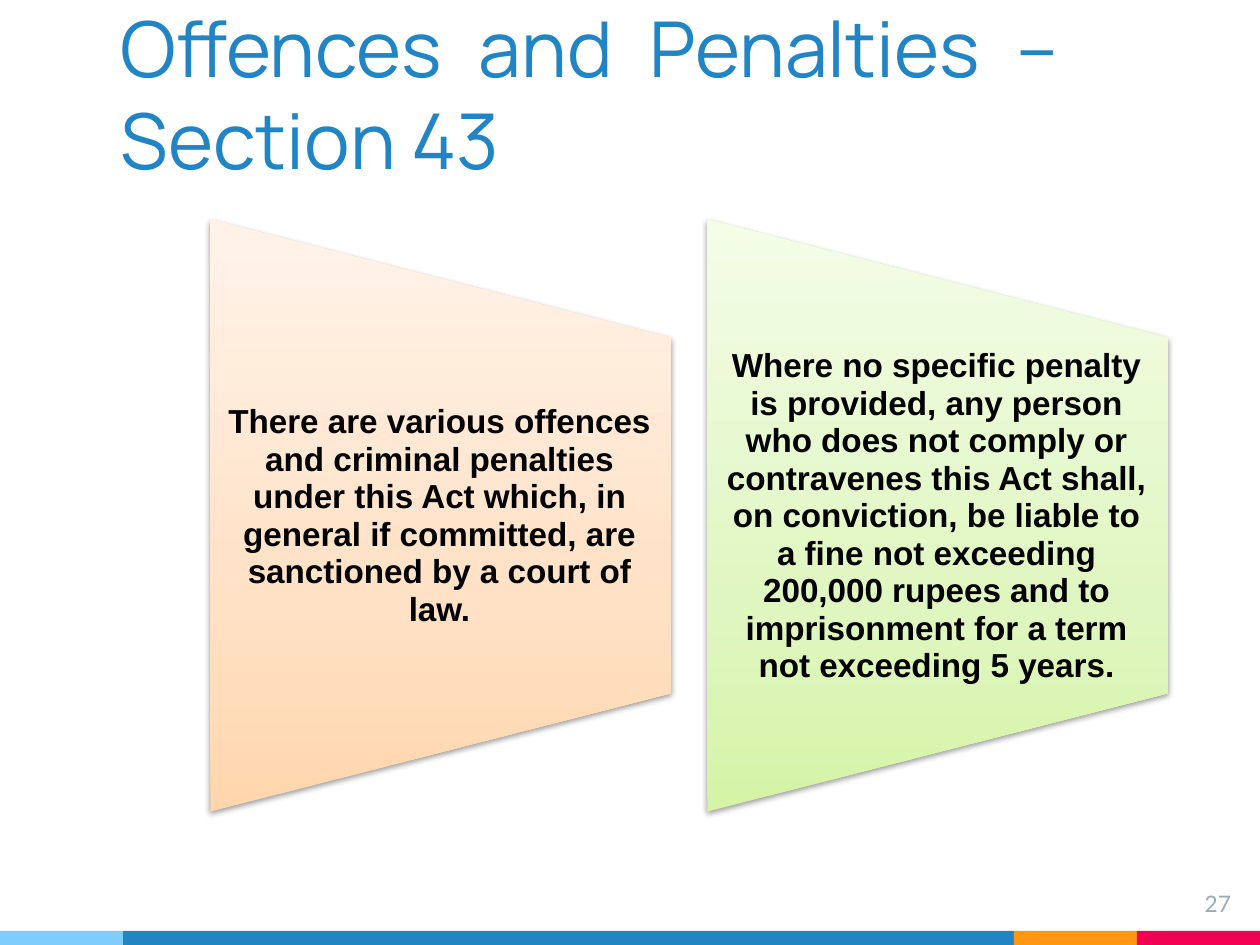
"""Build the slide on offences and penalties under Section 43."""
from dataclasses import dataclass

from pptx import Presentation
from pptx.dml.color import RGBColor
from pptx.enum.shapes import MSO_SHAPE
from pptx.enum.text import MSO_ANCHOR, PP_ALIGN
from pptx.oxml import parse_xml
from pptx.oxml.ns import qn
from pptx.util import Emu, Pt

RECT = MSO_SHAPE.RECTANGLE
TRAPEZE = MSO_SHAPE.FLOWCHART_MANUAL_OPERATION
TOP, MIDDLE, BOTTOM = MSO_ANCHOR.TOP, MSO_ANCHOR.MIDDLE, MSO_ANCHOR.BOTTOM
CENTER, RIGHT, JUSTIFY = PP_ALIGN.CENTER, PP_ALIGN.RIGHT, PP_ALIGN.JUSTIFY
SCALE = 914400 / 126
SPACE = 'xmlns:a="http://schemas.openxmlformats.org/drawingml/2006/main"'


@dataclass(frozen=True)
class Theme:
    blue: str = "2185C5"
    sky: str = "7ECEFD"
    amber: str = "FF9715"
    red: str = "F20253"
    gray: str = "97ABBC"
    black: str = "000000"
    peach: tuple = ("FFD6AD", "FFE1C5", "FFF3E9")
    lime: tuple = ("D5F4A6", "E0F6C1", "F3FDE7")
    head: int = 44
    body: int = 19
    foot: int = 13


@dataclass(frozen=True)
class Box:
    left: int
    top: int
    width: int
    height: int


@dataclass(frozen=True)
class Band:
    width: int
    color: str


@dataclass(frozen=True)
class Panel:
    left: int
    stops: tuple
    text: str


THEME = Theme()
BANDS = (Band(123, THEME.sky), Band(891, THEME.blue),
         Band(123, THEME.amber), Band(123, THEME.red))
PANELS = (
    Panel(210, THEME.peach,
          "There are various offences and criminal penalties under this Act "
          "which, in general if committed, are sanctioned by a court of law."),
    Panel(707, THEME.lime,
          "Where no specific penalty is provided, any person who does not "
          "comply or contravenes this Act shall, on conviction, be liable to "
          "a fine not exceeding 200,000 rupees and to imprisonment for a term "
          "not exceeding 5 years."),
)


def px(count: int) -> Emu:
    """Turn pixels into EMU."""
    return Emu(round(count * SCALE))


def place(box: Box) -> tuple:
    """Give the position and size of a box in EMU."""
    return px(box.left), px(box.top), px(box.width), px(box.height)


def write(slide, box: Box, text: str, *, font: str, size: int, color: str,
          align, anchor=TOP, bold: bool = False, pad: tuple = (13, 13, 13, 13),
          pitch: float = 1.0, indent: int = 0) -> None:
    """Write one paragraph in a text box."""
    frame = slide.shapes.add_textbox(*place(box)).text_frame
    frame.word_wrap = True
    frame.vertical_anchor = anchor
    (frame.margin_left, frame.margin_top,
     frame.margin_right, frame.margin_bottom) = map(px, pad)
    para = frame.paragraphs[0]
    para.alignment = align
    para.line_spacing = pitch
    if indent:
        para._p.get_or_add_pPr().set("marL", str(px(indent)))
    run = para.add_run()
    run.text = text
    run.font.name = font
    run.font.size = Pt(size)
    run.font.bold = bold
    run.font.color.rgb = RGBColor.from_string(color)


def stripe(slide, bands: tuple) -> None:
    """Draw the bands side by side along the foot of the slide."""
    left = 0
    for band in bands:
        shape = slide.shapes.add_shape(RECT, *place(Box(left, 931, band.width, 14)))
        shape.shadow.inherit = False
        shape.fill.solid()
        shape.fill.fore_color.rgb = RGBColor.from_string(band.color)
        shape.line.fill.background()
        left += band.width


def shade(shape, stops: tuple) -> None:
    """Give a shape an upright gradient and a soft shadow below."""
    shape.fill.background()
    shape.line.fill.background()
    shape.shadow.inherit = False
    marks = "".join(
        f'<a:gs pos="{pos}"><a:srgbClr val="{color}"/></a:gs>'
        for pos, color in zip((0, 35000, 100000), stops))
    props = shape._element.spPr
    props.replace(props.find(qn("a:noFill")), parse_xml(
        f'<a:gradFill {SPACE} rotWithShape="0"><a:gsLst>{marks}</a:gsLst>'
        '<a:lin ang="16200000" scaled="0"/></a:gradFill>'))
    props.find(qn("a:effectLst")).append(parse_xml(
        f'<a:outerShdw {SPACE} blurRad="40000" dist="20000" dir="5400000" '
        f'rotWithShape="0"><a:srgbClr val="{THEME.black}">'
        '<a:alpha val="38000"/></a:srgbClr></a:outerShdw>'))


def show(slide, panel: Panel) -> None:
    """Draw a turned trapeze with its text."""
    width, height, top = 461, 592, 220
    shift = (height - width) // 2
    shape = slide.shapes.add_shape(
        TRAPEZE, *place(Box(panel.left - shift, top + shift, height, width)))
    shape.rotation = 270
    shade(shape, panel.stops)
    write(slide, Box(panel.left, 339, width, 355), panel.text, font="Arial",
          size=THEME.body, color=THEME.black, bold=True, align=CENTER,
          anchor=MIDDLE, pad=(16, 0, 18, 0), pitch=0.94)


def main() -> None:
    """Build and save the slide."""
    deck = Presentation()
    deck.slide_width, deck.slide_height = px(1260), px(945)
    slide = deck.slides.add_slide(deck.slide_layouts[6])
    stripe(slide, BANDS)
    write(slide, Box(103, 72, 969, 126), "Offences and Penalties – Section 43",
          font="Manrope", size=THEME.head, color=THEME.blue, align=JUSTIFY,
          anchor=BOTTOM, indent=5)
    write(slide, Box(1168, 877, 76, 58), "27", font="Lato", size=THEME.foot,
          color=THEME.gray, align=RIGHT)
    for panel in PANELS:
        show(slide, panel)
    deck.save("out.pptx")


if __name__ == "__main__":
    main()
